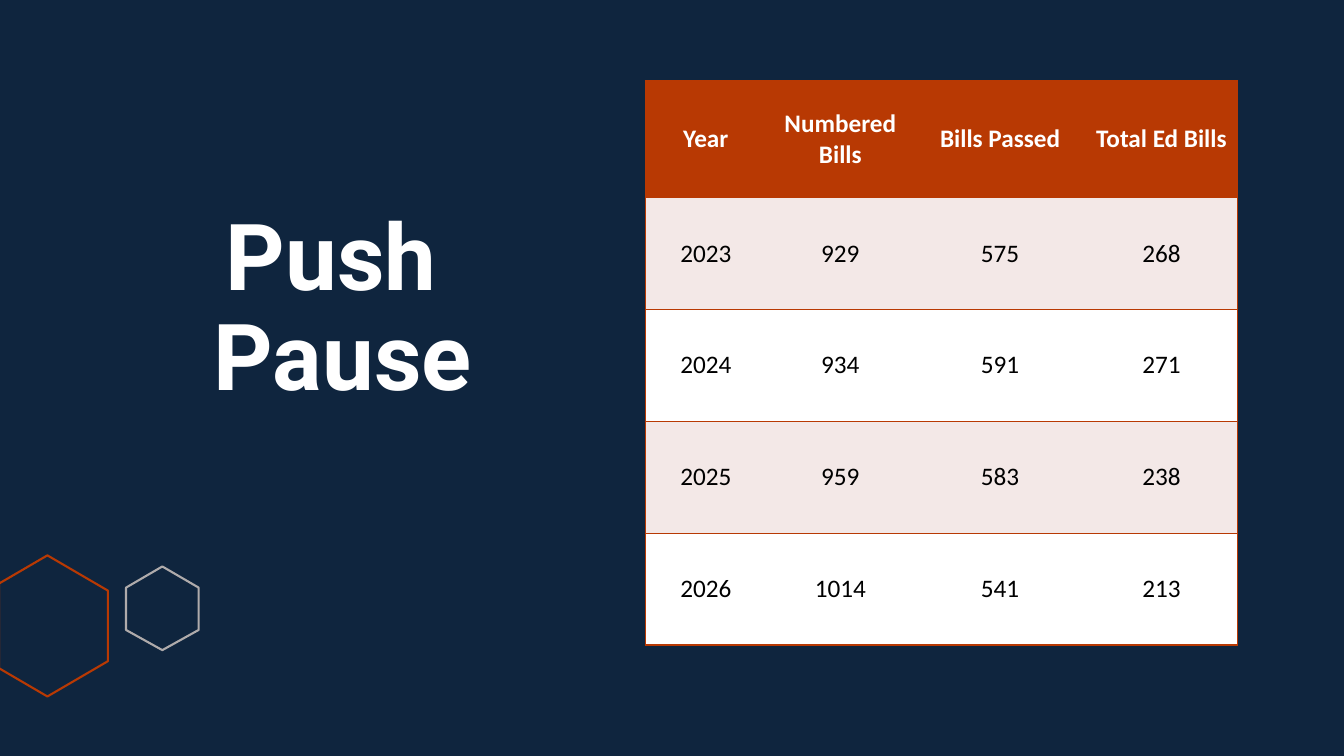
from lxml import etree
from pptx import Presentation
from pptx.dml.color import RGBColor
from pptx.enum.text import MSO_ANCHOR, MSO_AUTO_SIZE, PP_ALIGN
from pptx.oxml.ns import qn
from pptx.util import Pt

PX = 9144  # EMU per px, 100 px to the inch
CENTER = PP_ALIGN.CENTER
BOTTOM, MIDDLE = MSO_ANCHOR.BOTTOM, MSO_ANCHOR.MIDDLE
NO_FIT = MSO_AUTO_SIZE.NONE

COLORS = {
    "navy": "0F253E",
    "rust": "B83903",
    "grey": "AFABAB",
    "blush": "F3E8E7",
    "white": "FFFFFF",
    "black": "000000",
}

BILLS = [
    ["Year", "Numbered Bills", "Bills Passed", "Total Ed Bills"],
    ["2023", "929", "575", "268"],
    ["2024", "934", "591", "271"],
    ["2025", "959", "583", "238"],
    ["2026", "1014", "541", "213"],
]
COL_WIDTHS = [120, 147, 170, 150]
ROW_HEIGHTS = [116] + [111] * 4

LARGE_HEXAGON = [(47, 551), (107, 586), (107, 656), (47, 691), (-1, 663), (-1, 579)]
SMALL_HEXAGON = [(161, 562), (197, 583), (197, 625), (161, 645), (125, 625), (125, 583)]


def rgb(name):
    return RGBColor.from_string(COLORS[name])


def write(tf, text, font, size, color, bold=False, spacing=None):
    tf.text = text
    p = tf.paragraphs[0]
    p.alignment = CENTER
    p.line_spacing = spacing
    for r in p.runs:
        r.font.name = font
        r.font.size = Pt(size)
        r.font.bold = bold
        r.font.color.rgb = rgb(color)


def set_borders(cell, colors):
    """Set left, right, top and bottom borders; None hides a side."""
    tc_pr = cell._tc.get_or_add_tcPr()
    for i, (side, color) in enumerate(zip("LRTB", colors)):
        ln = etree.Element(qn(f"a:ln{side}"), w=str(Pt(1)))
        if color:
            fill = etree.SubElement(ln, qn("a:solidFill"))
            etree.SubElement(fill, qn("a:srgbClr"), val=COLORS[color])
        else:
            etree.SubElement(ln, qn("a:noFill"))
        tc_pr.insert(i, ln)


class SlideBuilder:
    def __init__(self, prs):
        self.s = prs.slides.add_slide(prs.slide_layouts[5])

    def background(self, color):
        fill = self.s.background.fill
        fill.solid()
        fill.fore_color.rgb = rgb(color)

    def title(self, text, x, y, w, h):
        sp = self.s.shapes.title
        sp.left, sp.top, sp.width, sp.height = (v * PX for v in (x, y, w, h))
        tf = sp.text_frame
        tf.word_wrap = True
        tf.auto_size = NO_FIT
        tf.vertical_anchor = BOTTOM
        write(tf, text, "Roboto", 66, "white", bold=True, spacing=0.9)

    def outline(self, points, color):
        builder = self.s.shapes.build_freeform(*points[0], scale=PX)
        builder.add_line_segments(points[1:], close=True)
        sp = builder.convert_to_shape()
        sp.shadow.inherit = False
        sp.fill.background()
        sp.line.color.rgb = rgb(color)
        sp.line.width = Pt(1.5)

    def table(self, rows, x, y, widths, heights):
        table = self.s.shapes.add_table(
            len(rows), len(widths), x * PX, y * PX, sum(widths) * PX, sum(heights) * PX
        ).table
        for column, width in zip(table.columns, widths):
            column.width = width * PX
        for row, height in zip(table.rows, heights):
            row.height = height * PX
        last = len(widths) - 1
        for i, values in enumerate(rows):
            header = i == 0
            fill = "rust" if header else "blush" if i % 2 else "white"
            for j, value in enumerate(values):
                cell = table.cell(i, j)
                cell.vertical_anchor = MIDDLE
                cell.margin_left = cell.margin_right = 9 * PX
                cell.fill.solid()
                cell.fill.fore_color.rgb = rgb(fill)
                write(cell.text_frame, value, "Calibri", 18,
                      "white" if header else "black", bold=header)
                left = "rust" if j == 0 else None
                right = "rust" if j == last else None
                set_borders(cell, (left, right, "rust", "rust"))


def main():
    prs = Presentation()
    prs.slide_width, prs.slide_height = 1333 * PX, 750 * PX
    slide = SlideBuilder(prs)
    slide.background("navy")
    slide.outline(LARGE_HEXAGON, "rust")
    slide.outline(SMALL_HEXAGON, "grey")
    slide.title("Push \vPause", 100, 80, 480, 332)
    slide.table(BILLS, 640, 80, COL_WIDTHS, ROW_HEIGHTS)
    prs.save("out.pptx")


if __name__ == "__main__":
    main()
